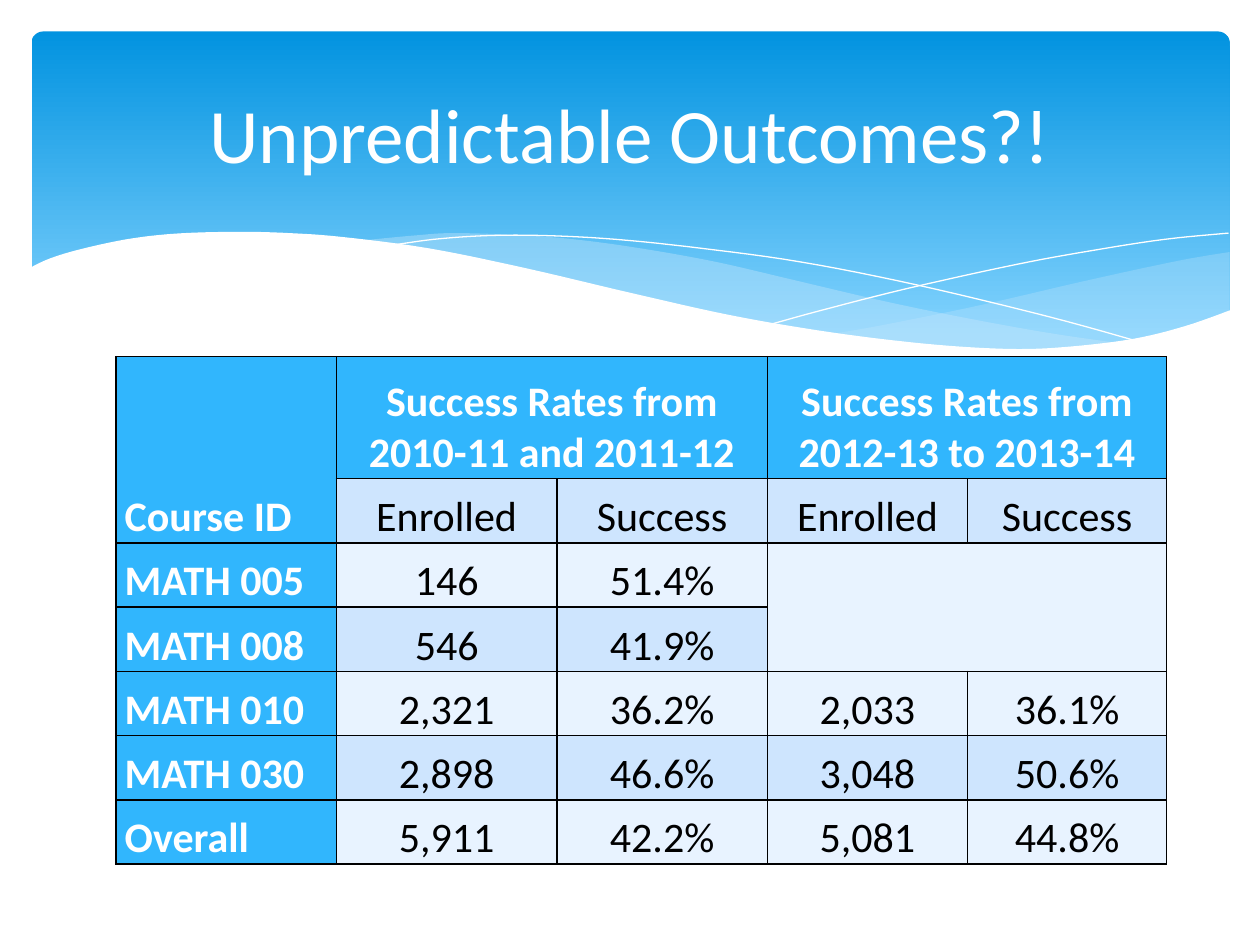
"""Build the slide comparing course success rates in a table under a wave banner."""
from lxml import etree
from pptx import Presentation
from pptx import util as u
from pptx.dml.color import RGBColor
from pptx.enum import shapes, text
from pptx.oxml import ns

THEME = {
    "font": "Calibri", "title_size": u.Pt(44), "cell_size": u.Pt(24),
    "white": RGBColor.from_string("FFFFFF"), "black": RGBColor.from_string("000000"),
    "sky_top": RGBColor.from_string("0293E0"), "sky_low": RGBColor.from_string("83D3FE"),
    "mist": RGBColor.from_string("C6E7FC"), "header": RGBColor.from_string("31B6FD"),
    "band_dark": RGBColor.from_string("CEE5FE"), "band_light": RGBColor.from_string("E8F3FF"),
}


def smooth(knots, steps=6):
    """Return points on a Catmull-Rom curve through the knots."""
    padded = [knots[0], *knots, knots[-1]]
    points = [knots[0]]
    for a, b, c, d in zip(padded, padded[1:], padded[2:], padded[3:]):
        for step in range(1, steps + 1):
            t = step / steps
            points.append(tuple(
                (2 * q + (r - p) * t + (2 * p - 5 * q + 4 * r - s) * t ** 2
                 + (3 * q - p - 3 * r + s) * t ** 3) / 2
                for p, q, r, s in zip(a, b, c, d)))
    return points


def add_outline(page, edges, closed):
    """Draw smooth edges joined end to end."""
    points = [(u.Inches(x), u.Inches(y)) for edge in edges for x, y in smooth(edge)]
    builder = page.shapes.build_freeform(*points[0])
    builder.add_line_segments(points[1:], close=closed)
    outline = builder.convert_to_shape()
    outline.shadow.inherit = False
    return outline


deck = Presentation()
deck.slide_width, deck.slide_height = u.Inches(10), u.Inches(7.5)
page = deck.slides.add_slide(deck.slide_layouts[5])

banner = page.shapes.add_shape(shapes.MSO_SHAPE.ROUNDED_RECTANGLE, u.Inches(0.25),
                               u.Inches(0.25), u.Inches(9.51), u.Inches(2.7))
banner.adjustments[0] = 0.034
banner.shadow.inherit = False
banner.line.fill.background()
banner.fill.gradient()
banner.fill.gradient_angle = 270
for stop, position, color in zip(banner.fill.gradient_stops, (0, 0.9), ("sky_top", "sky_low")):
    stop.position = position
    stop.color.rgb = THEME[color]

right_swell = [
    [(9.76, 2), (9.35, 2.07), (8.61, 2.23), (7.79, 2.42), (7.06, 2.57), (6.61, 2.65)],
    [(6.61, 2.65), (7.05, 2.71), (7.57, 2.76), (8.03, 2.78), (8.54, 2.76), (8.97, 2.7),
     (9.35, 2.62), (9.76, 2.47)],
]
middle_swell = [
    [(8.93, 2.73), (8.37, 2.65), (7.75, 2.54), (7.06, 2.4), (6.29, 2.22), (5.69, 2.08),
     (5.14, 1.98), (4.65, 1.91), (4.2, 1.87), (3.61, 1.85), (3.28, 1.87), (2.86, 1.91)],
    [(2.86, 1.91), (3.42, 1.99), (4.04, 2.11), (4.91, 2.32), (5.66, 2.48), (6.34, 2.61),
     (6.95, 2.7), (7.48, 2.76), (8.07, 2.78), (8.57, 2.77), (8.93, 2.73)],
]
white_wave = [
    [(9.77, 2.46), (9.4, 2.59), (8.99, 2.69), (8.5, 2.75), (8.09, 2.77), (7.61, 2.75),
     (7.08, 2.7), (6.48, 2.62), (5.79, 2.5), (5.03, 2.33), (4.18, 2.13), (3.4, 1.97),
     (2.71, 1.88), (2.3, 1.85), (1.93, 1.84), (1.46, 1.85), (1.06, 1.89), (0.67, 1.97),
     (0.4, 2.05), (0.23, 2.13)],
    [(0.23, 3.29), (9.77, 3.29)],
]
falling_line = [(3.09, 1.95), (3.44, 1.9), (3.87, 1.87), (4.33, 1.87), (4.89, 1.9),
                (5.56, 1.97), (6.36, 2.08), (7.27, 2.26), (8.31, 2.51), (9.07, 2.72)]
rising_line = [(6.13, 2.57), (6.53, 2.46), (7.2, 2.29), (8.06, 2.1), (8.66, 1.99),
               (9.24, 1.9), (9.75, 1.85)]

for edges, opacity in ((right_swell, 29), (middle_swell, 40)):
    swell = add_outline(page, edges, True)
    swell.line.fill.background()
    swell.fill.solid()
    swell.fill.fore_color.rgb = THEME["mist"]
    tint = swell.element.spPr.find(".//" + ns.qn("a:srgbClr"))
    etree.SubElement(tint, ns.qn("a:alpha"), val=str(opacity * 1000))

for knots in (falling_line, rising_line):
    curve = add_outline(page, [knots], False)
    curve.fill.background()
    curve.line.color.rgb = THEME["white"]
    curve.line.width = u.Pt(0)

wave = add_outline(page, white_wave, True)
wave.line.fill.background()
wave.fill.solid()
wave.fill.fore_color.rgb = THEME["white"]

rows = [
    ["Course ID", "Success Rates from 2010-11 and 2011-12", "",
     "Success Rates from 2012-13 to 2013-14", ""],
    ["", "Enrolled", "Success", "Enrolled", "Success"],
    ["MATH 005", "146", "51.4%", "", ""],
    ["MATH 008", "546", "41.9%", "", ""],
    ["MATH 010", "2,321", "36.2%", "2,033", "36.1%"],
    ["MATH 030", "2,898", "46.6%", "3,048", "50.6%"],
    ["Overall", "5,911", "42.2%", "5,081", "44.8%"],
]
widths = [1.75, 1.75, 1.67, 1.59, 1.58]
heights = [0.97] + [0.51] * 6
table = page.shapes.add_table(len(rows), len(widths), u.Inches(0.92), u.Inches(2.83),
                              u.Inches(sum(widths)), u.Inches(sum(heights))).table
table.first_row = table.horz_banding = False
for column, width in zip(table.columns, widths):
    column.width = u.Inches(width)
for row, height in zip(table.rows, heights):
    row.height = u.Inches(height)
for first, last in (((0, 0), (1, 0)), ((0, 1), (0, 2)), ((0, 3), (0, 4)), ((2, 3), (3, 4))):
    table.cell(*first).merge(table.cell(*last))

cell_format = {"margin_left": u.Inches(0.07), "margin_right": u.Inches(0.07),
               "margin_top": 0, "margin_bottom": 0,
               "vertical_anchor": text.MSO_ANCHOR.BOTTOM}
for row_index, values in enumerate(rows):
    for column_index, value in enumerate(values):
        cell = table.cell(row_index, column_index)
        heading = row_index == 0 or column_index == 0
        for name, setting in cell_format.items():
            setattr(cell, name, setting)
        properties = cell._tc.get_or_add_tcPr()
        for side in ("a:lnL", "a:lnR", "a:lnT", "a:lnB"):
            border = etree.SubElement(properties, ns.qn(side), w=str(u.Pt(1)))
            paint = etree.SubElement(border, ns.qn("a:solidFill"))
            etree.SubElement(paint, ns.qn("a:srgbClr"), val=str(THEME["black"]))
        band = "band_dark" if row_index % 2 else "band_light"
        cell.fill.solid()
        cell.fill.fore_color.rgb = THEME["header" if heading else band]
        if value:
            para = cell.text_frame.paragraphs[0]
            para.alignment = text.PP_ALIGN.CENTER if column_index else text.PP_ALIGN.LEFT
            span = para.add_run()
            span.text = value
            for name, setting in {"name": THEME["font"], "size": THEME["cell_size"],
                                  "bold": heading}.items():
                setattr(span.font, name, setting)
            span.font.color.rgb = THEME["white" if heading else "black"]

title = page.shapes.title
for name, setting in {"left": 0.5, "top": 0.37, "width": 9, "height": 1.37}.items():
    setattr(title, name, u.Inches(setting))
title.text_frame.vertical_anchor = text.MSO_ANCHOR.MIDDLE
para = title.text_frame.paragraphs[0]
para.alignment = text.PP_ALIGN.CENTER
span = para.add_run()
span.text = "Unpredictable Outcomes?!"
for name, setting in {"name": THEME["font"], "size": THEME["title_size"]}.items():
    setattr(span.font, name, setting)
span.font.color.rgb = THEME["white"]
title.element.getparent().append(title.element)

deck.save("out.pptx")
